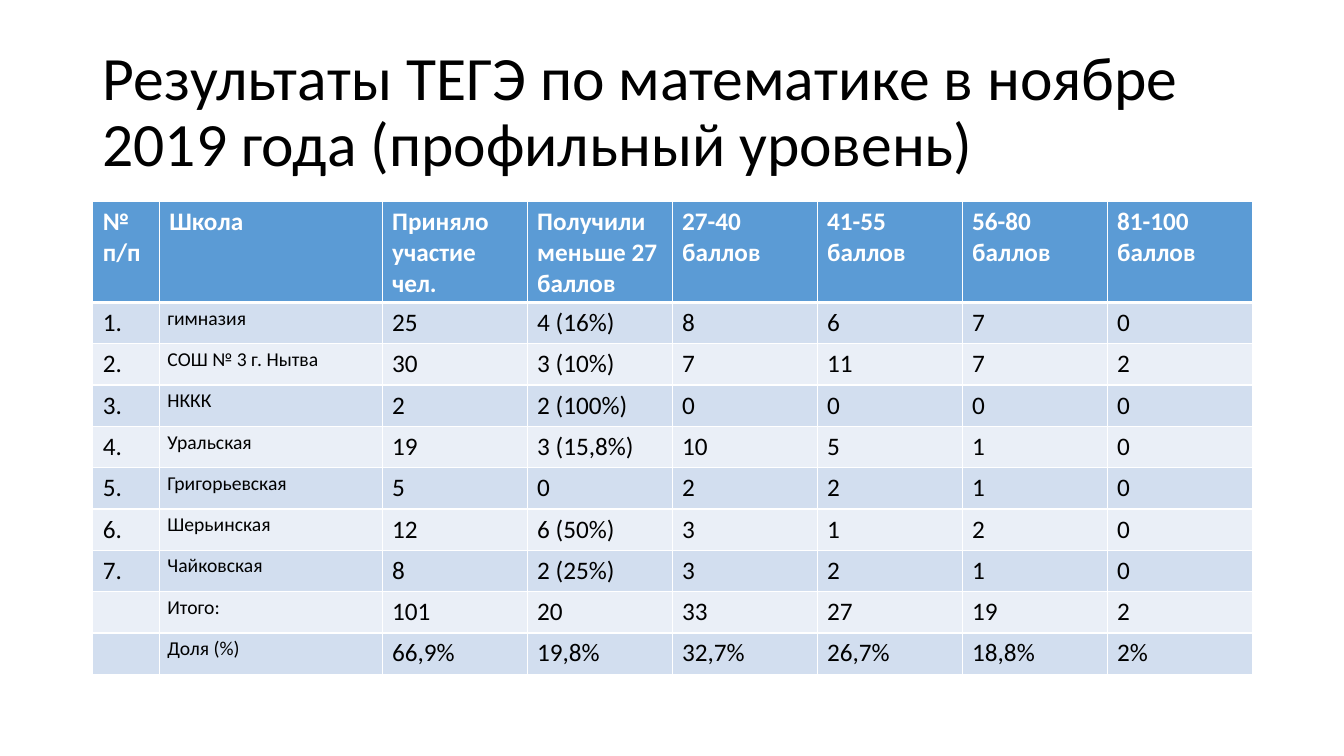
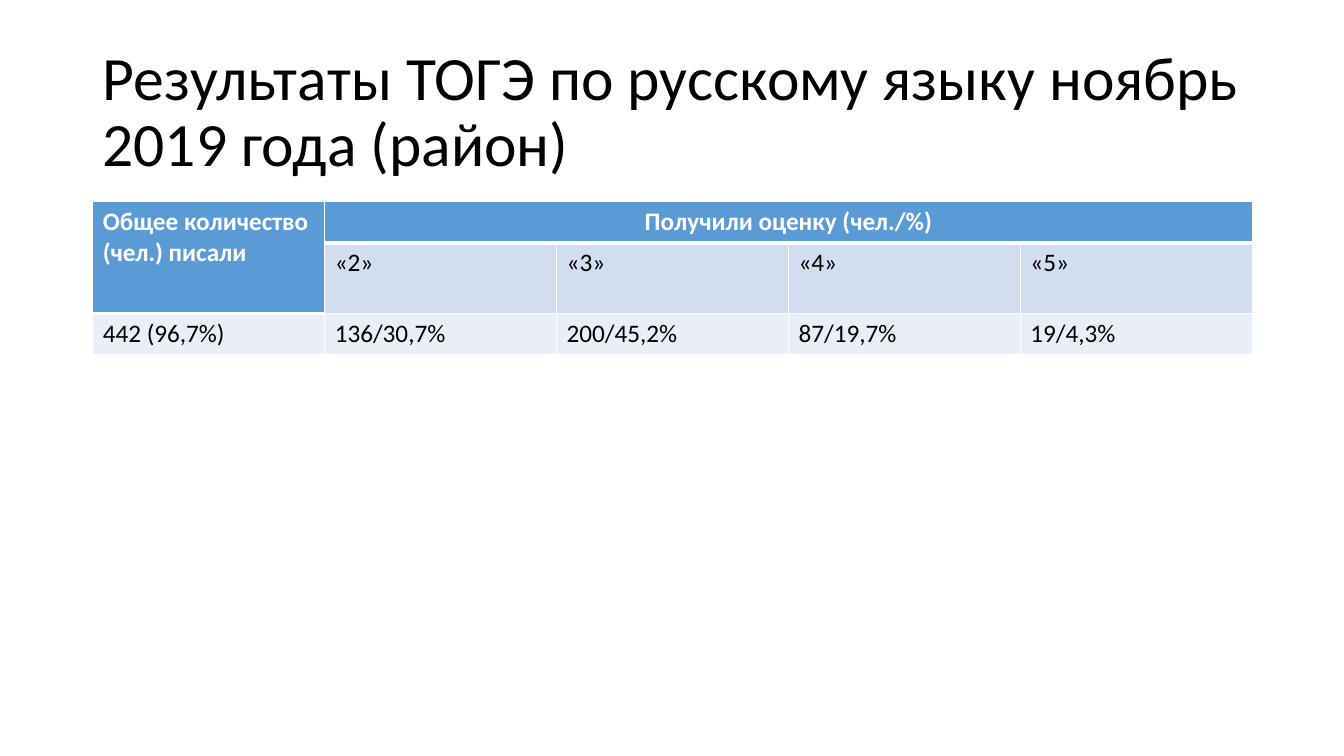
from dataclasses import dataclass

from lxml import etree
from pptx import Presentation
from pptx import util as u
from pptx.dml.color import RGBColor
from pptx.enum import text
from pptx.oxml import ns


# Colours, type and the grid shared by both slides
@dataclass(frozen=True)
class Theme:
    font: str = "Calibri"
    ink: str = "000000"
    white: str = "FFFFFF"
    head: str = "5B9BD5"
    bands: tuple = ("D2DEEF", "EAEFF7")
    title: int = 44
    body: int = 18
    small: int = 14
    thin: int = 1
    thick: int = 3
    left: float = 0.92
    width: float = 11.5
    top: float = 2
    row: float = 0.41


T = Theme()

# Slide 1 data
EXAM = "Результаты ТЕГЭ по математике в ноябре 2019 года (профильный уровень)"
SCHOOLS = [
    ["№ п/п", "Школа", "Приняло участие чел.", "Получили меньше 27 баллов",
     "27-40 баллов", "41-55 баллов", "56-80 баллов", "81-100 баллов"],
    ["1.", "гимназия", "25", "4 (16%)", "8", "6", "7", "0"],
    ["2.", "СОШ № 3 г. Нытва", "30", "3 (10%)", "7", "11", "7", "2"],
    ["3.", "НККК", "2", "2 (100%)", "0", "0", "0", "0"],
    ["4.", "Уральская", "19", "3 (15,8%)", "10", "5", "1", "0"],
    ["5.", "Григорьевская", "5", "0", "2", "2", "1", "0"],
    ["6.", "Шерьинская", "12", "6 (50%)", "3", "1", "2", "0"],
    ["7.", "Чайковская", "8", "2 (25%)", "3", "2", "1", "0"],
    ["", "Итого:", "101", "20", "33", "27", "19", "2"],
    ["", "Доля (%)", "66,9%", "19,8%", "32,7%", "26,7%", "18,8%", "2%"],
]

# Slide 2 data
TEST = "Результаты ТОГЭ по русскому языку ноябрь 2019 года (район)"
MARKS = [
    ["Общее количество (чел.) писали", "Получили оценку (чел./%)", "", "", ""],
    ["", "«2»", "«3»", "«4»", "«5»"],
    ["442 (96,7%)", "136/30,7%", "200/45,2%", "87/19,7%", "19/4,3%"],
]


def write(par, words, size, color, bold=False):
    run = par.add_run()
    run.text = words
    run.font.name = T.font
    run.font.size = u.Pt(size)
    run.font.bold = bold
    run.font.color.rgb = RGBColor.from_string(color)


def add_title(slide, words):
    box = slide.shapes.add_textbox(
        u.Inches(T.left), u.Inches(0.4), u.Inches(T.width), u.Inches(1.45))
    frame = box.text_frame
    frame.word_wrap = True
    frame.vertical_anchor = text.MSO_ANCHOR.MIDDLE
    par = frame.paragraphs[0]
    par.line_spacing = 0.9
    write(par, words, T.title, T.ink)


def add_edge(cell, side, width):
    props = cell._tc.get_or_add_tcPr()
    line = etree.SubElement(props, ns.qn(f"a:ln{side}"), w=str(u.Pt(width)))
    fill = etree.SubElement(line, ns.qn("a:solidFill"))
    etree.SubElement(fill, ns.qn("a:srgbClr"), val=T.white)


def paint(cell, row, head):
    # Borders come before the fill in the cell's XML
    for side in "LRTB":
        if side != "T" or row == 0:
            add_edge(cell, side, T.thick if head and side == "B" else T.thin)
    cell.fill.solid()
    color = T.head if head else T.bands[(row - 1) % 2]
    cell.fill.fore_color.rgb = RGBColor.from_string(color)


def add_grid(slide, rows, widths, merges=(), small=None):
    """Merges are (row, column, last row, last column); small is a column."""
    frame = slide.shapes.add_table(
        len(rows), len(widths), u.Inches(T.left), u.Inches(T.top),
        u.Inches(T.width), u.Inches(T.row * len(rows)))
    table = frame.table
    for col, width in zip(table.columns, widths):
        col.width = u.Inches(width)
    for line in table.rows:
        line.height = u.Inches(T.row)
    for r1, c1, r2, c2 in merges:
        table.cell(r1, c1).merge(table.cell(r2, c2))

    for r, line in enumerate(rows):
        for c, words in enumerate(line):
            cell = table.cell(r, c)
            head = r == 0 or cell.is_spanned
            tiny = c == small and not head
            paint(cell, r, head)
            if tiny:
                cell.margin_left = cell.margin_right = u.Inches(0.08)
                cell.margin_top = cell.margin_bottom = u.Inches(0.04)
            if words:
                write(cell.text_frame.paragraphs[0], words,
                      T.small if tiny else T.body,
                      T.white if head else T.ink, head)
    return table


def main():
    deck = Presentation()
    deck.slide_width, deck.slide_height = u.Inches(13.33), u.Inches(7.5)
    blank = deck.slide_layouts[6]

    # Results by school
    slide = deck.slides.add_slide(blank)
    add_title(slide, EXAM)
    first = [0.66, 2.21]
    score = (T.width - sum(first)) / 6
    add_grid(slide, SCHOOLS, first + [score] * 6, small=1)

    # Results by mark
    slide = deck.slides.add_slide(blank)
    add_title(slide, TEST)
    table = add_grid(slide, MARKS, [T.width / 5] * 5,
                     merges=[(0, 0, 1, 0), (0, 1, 0, 4)])
    par = table.cell(0, 1).text_frame.paragraphs[0]
    par.alignment = text.PP_ALIGN.CENTER

    deck.save("out.pptx")


if __name__ == "__main__":
    main()
